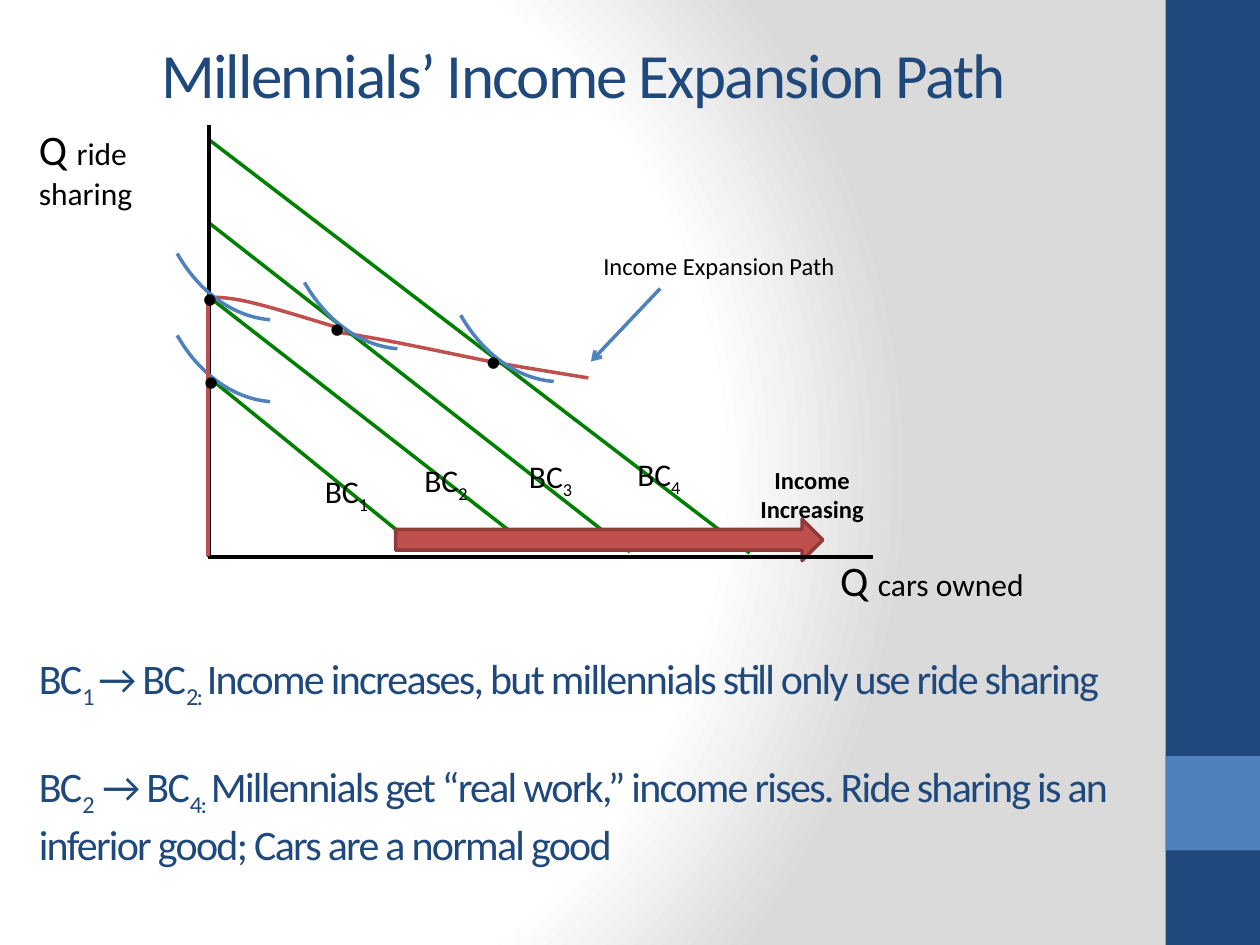
import pptx
import pptx.util
import pptx.dml.color
import pptx.enum.shapes
import pptx.enum.text
import pptx.oxml
import pptx.oxml.ns

Inches, Pt = pptx.util.Inches, pptx.util.Pt
SHAPE = pptx.enum.shapes.MSO_SHAPE
ALIGN = pptx.enum.text.PP_ALIGN
ANCHOR = pptx.enum.text.MSO_ANCHOR
NS = pptx.oxml.ns.nsdecls("a")

NAVY, BLUE, RED, GREEN, BLACK = "1F497D", "4F81BD", "C0504D", "008000", "000000"

# Content: a run is (text, size) or (text, size, "sub")
TITLE = [[("Millennials’ Income Expansion Path", 36)]]
NOTES = [
    [("BC", 24), ("1 ", 24, "sub"), ("→ BC", 24), ("2: ", 24, "sub"),
     ("Income increases, but millennials still only use ride sharing", 24)],
    [("BC", 24), ("2", 24, "sub"), (" → BC", 24), ("4: ", 24, "sub"),
     ("Millennials get “real work,” income rises. Ride sharing is an "
      "inferior good; Cars are a normal good", 24)],
]
Y_LABEL = [[("Q ", 24), ("ride sharing", 18)]]
X_LABEL = [[("Q ", 24), ("cars owned", 18)]]

# Side bands: left, top, width, height, colour
BANDS = [(9.25, 0, 0.75, 7.5, NAVY), (9.25, 6, 0.75, 0.75, BLUE)]
# Expansion path: start point, then cubic segments (control, control, end)
PATH_CURVES = [
    [(1.66, 2.36),
     ((1.74, 2.36), (1.82, 2.36), (1.99, 2.4)),
     ((2.17, 2.44), (2.71, 2.61), (2.71, 2.61))],
    [(2.69, 2.65),
     ((2.68, 2.64), (2.67, 2.63), (2.88, 2.67)),
     ((3.08, 2.7), (3.64, 2.82), (3.94, 2.88)),
     ((4.24, 2.93), (4.67, 3), (4.67, 3))],
]
# Budget constraints: line start, line end, label position
BUDGETS = [
    ((1.7, 3.03), (3.25, 4.29), (2.48, 3.7)),
    ((1.65, 2.35), (4.22, 4.35), (3.27, 3.61)),
    ((1.66, 1.77), (5, 4.38), (4.1, 3.58)),
    ((1.66, 1.11), (5.95, 4.39), (4.96, 3.56)),
]
AXES = [((1.66, 0.99), (1.66, 4.42)), ((1.65, 4.42), (6.93, 4.42))]
INDIFFERENCE = [(1.2, -0.15), (3.45, 0.34), (2.21, 0.08), (1.2, 0.5)]
TANGENCIES = [(2.52, 2.35), (3.76, 2.61), (1.52, 2.77), (1.51, 2.11)]

prs = pptx.Presentation()
prs.slide_width, prs.slide_height = Inches(10), Inches(7.5)
s = prs.slides.add_slide(prs.slide_layouts[6])


def rgb(value):
    return pptx.dml.color.RGBColor.from_string(value)


def set_line(sp, color):
    sp.line.color.rgb = rgb(color)
    sp.line.width = Pt(2)


def add_shape(kind, x, y, w, h, fill=None, line=None):
    sp = s.shapes.add_shape(kind, Inches(x), Inches(y), Inches(w), Inches(h))
    sp.shadow.inherit = False
    if fill:
        sp.fill.solid()
        sp.fill.fore_color.rgb = rgb(fill)
    else:
        sp.fill.background()
    if line:
        set_line(sp, line)
    else:
        sp.line.fill.background()
    return sp


def add_line(start, end, color, arrow=False):
    sp = s.shapes.add_connector(pptx.enum.shapes.MSO_CONNECTOR.STRAIGHT,
                                *(Inches(v) for v in (*start, *end)))
    set_line(sp, color)
    sp._element.spPr.append(pptx.oxml.parse_xml(f"<a:effectLst {NS}/>"))
    if arrow:
        sp.line._get_or_add_ln().append(
            pptx.oxml.parse_xml(f'<a:tailEnd {NS} type="arrow"/>'))


def add_curve(start, *segments, steps=12):
    points, a = [], start
    for b, c, d in segments:
        for t in (i / steps for i in range(1, steps + 1)):
            u = 1 - t
            points.append(tuple(
                Inches(u**3 * p0 + 3 * u * u * t * p1 + 3 * u * t * t * p2 + t**3 * p3)
                for p0, p1, p2, p3 in zip(a, b, c, d)))
        a = d
    builder = s.shapes.build_freeform(Inches(start[0]), Inches(start[1]))
    builder.add_line_segments(points, close=False)
    sp = builder.convert_to_shape()
    sp.shadow.inherit = False
    sp.fill.background()
    set_line(sp, RED)


def add_text(paragraphs, x, y, w, h, color=BLACK, font="Calibri", bold=False,
             align=ALIGN.LEFT, anchor=ANCHOR.TOP, wrap=True, spacing=0, gap=0):
    tf = s.shapes.add_textbox(Inches(x), Inches(y), Inches(w), Inches(h)).text_frame
    tf.word_wrap, tf.vertical_anchor = wrap, anchor
    for i, runs in enumerate(paragraphs):
        p = tf.paragraphs[0] if i == 0 else tf.add_paragraph()
        p.alignment = align
        if i:
            p.space_before = Pt(gap)
        for text, size, *sub in runs:
            r = p.add_run()
            r.text = text
            r.font.name, r.font.size, r.font.bold = font, Pt(size), bold
            r.font.color.rgb = rgb(color)
            rpr = r._r.get_or_add_rPr()
            if sub:
                rpr.set("baseline", "-25000")
            if spacing:
                rpr.set("spc", str(spacing * 100))


# Background gradient
s.background.fill.solid()
bg = s._element.cSld.bg.bgPr
stops = "".join(f'<a:gs pos="{pos}000"><a:srgbClr val="{color}"/></a:gs>'
                for pos, color in ((0, "FFFFFF"), (75, "FFFFFF"), (100, "DADADA")))
bg.replace(bg[0], pptx.oxml.parse_xml(
    f'<a:gradFill {NS} rotWithShape="1"><a:gsLst>{stops}</a:gsLst><a:path path="circle">'
    '<a:fillToRect l="20000" t="50000" r="100000" b="50000"/></a:path></a:gradFill>'))

for x, y, w, h, color in BANDS:
    add_shape(SHAPE.RECTANGLE, x, y, w, h, fill=color)

# Expansion path and budget constraints
for curve in PATH_CURVES:
    add_curve(*curve)
for start, end, _ in BUDGETS:
    add_line(start, end, GREEN)
for n, (_, _, (x, y)) in enumerate(BUDGETS, 1):
    add_text([[("BC", 18), (str(n), 18, "sub")]], x, y, 0.66, 0.4)

# Rising income
add_shape(SHAPE.RIGHT_ARROW, 3.14, 4.12, 3.39, 0.33, fill=RED, line="8E3B39")
add_text([[("Income Increasing", 14)]], 5.84, 3.64, 1.21, 0.57, bold=True, align=ALIGN.CENTER)

# Axes and their labels
add_text(Y_LABEL, 0.21, 0.93, 0.97, 0.81)
add_text(X_LABEL, 6.57, 4.35, 1.74, 0.5)
for start, end in AXES:
    add_line(start, end, BLACK)

# Indifference curves
for x, y in INDIFFERENCE:
    arc = add_shape(SHAPE.ARC, x, y, 2.01, 2.69, line=BLUE)
    arc.rotation = 180
    arc.adjustments[0], arc.adjustments[1] = 163.55, 188.62

# Path along the vertical axis, pointer and tangency dots
add_line((1.65, 4.41), (1.65, 2.35), RED)
add_line((5.24, 2.29), (4.69, 2.87), BLUE, arrow=True)
add_text([[("Income Expansion Path", 14)]], 4.69, 1.94, 2.14, 0.34)
for x, y in TANGENCIES:
    add_text([[("•", 24)]], x, y, 0.36, 0.5, font="Arial", wrap=False)

# Title and explanation
add_text(TITLE, 1.18, 0.17, 7.34, 0.82, color=NAVY, anchor=ANCHOR.MIDDLE, spacing=-1)
add_text(NOTES, 0.21, 5.13, 9.08, 2.12, color=NAVY, spacing=-1, gap=29)

prs.save("out.pptx")
